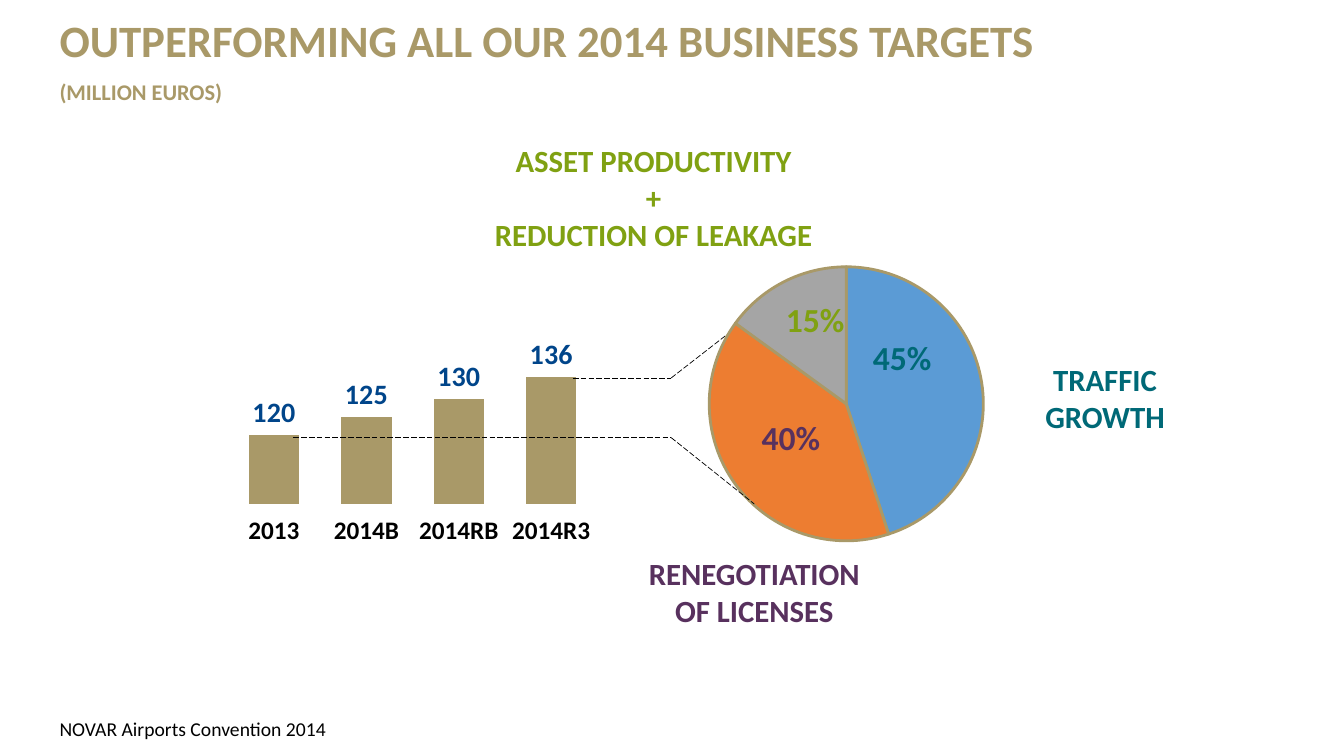
from lxml import etree
from pptx import Presentation
from pptx.chart.data import CategoryChartData
from pptx.dml.color import RGBColor
from pptx.enum.chart import XL_CHART_TYPE, XL_LABEL_POSITION, XL_TICK_MARK
from pptx.enum.dml import MSO_LINE
from pptx.enum.shapes import MSO_CONNECTOR
from pptx.enum.text import MSO_ANCHOR, MSO_AUTO_SIZE, PP_ALIGN
from pptx.oxml import parse_xml
from pptx.oxml.ns import nsdecls, qn
from pptx.util import Inches, Pt

PIE, COLUMNS = XL_CHART_TYPE.PIE, XL_CHART_TYPE.COLUMN_CLUSTERED
LABEL_CENTER, LABEL_ABOVE = XL_LABEL_POSITION.CENTER, XL_LABEL_POSITION.OUTSIDE_END
TICK_OUTSIDE, TICK_NONE = XL_TICK_MARK.OUTSIDE, XL_TICK_MARK.NONE
LONG_DASH = MSO_LINE.LONG_DASH
STRAIGHT = MSO_CONNECTOR.STRAIGHT
TOP, MIDDLE = MSO_ANCHOR.TOP, MSO_ANCHOR.MIDDLE
LEFT, CENTER = PP_ALIGN.LEFT, PP_ALIGN.CENTER
FIT_TEXT, FIXED = MSO_AUTO_SIZE.SHAPE_TO_FIT_TEXT, MSO_AUTO_SIZE.NONE

BLACK = RGBColor(0x00, 0x00, 0x00)
WHITE = RGBColor(0xFF, 0xFF, 0xFF)
GOLD = RGBColor(0xA9, 0x99, 0x68)
NAVY = RGBColor(0x00, 0x45, 0x8A)
GREEN = RGBColor(0x80, 0xA1, 0x12)
PURPLE = RGBColor(0x58, 0x31, 0x5E)
TEAL = RGBColor(0x00, 0x69, 0x77)
BLUE = RGBColor(0x5B, 0x9B, 0xD5)
ORANGE = RGBColor(0xED, 0x7D, 0x31)
GRAY = RGBColor(0xA5, 0xA5, 0xA5)

FONT = "Calibri"
SLIDE_WIDTH, SLIDE_HEIGHT = Inches(13.33), Inches(7.5)
GRID_COLUMNS, GRID_ROWS = 160, 90
PLOT_SHARES = {"x": 0.07, "y": 0.095, "w": 0.89, "h": 0.65}


def grid(*lengths):
    units = (SLIDE_WIDTH / GRID_COLUMNS, SLIDE_HEIGHT / GRID_ROWS)
    return [round(length * units[i % 2]) for i, length in enumerate(lengths)]


def style_font(font, size, color, bold=False):
    font.name = FONT
    font.size = Pt(size)
    font.bold = bold
    font.color.rgb = color


def add_text(slide, box, lines, color, anchor=TOP, align=LEFT, auto_size=FIT_TEXT, gap=0, spacing=1):
    frame = slide.shapes.add_textbox(*grid(*box)).text_frame
    frame.word_wrap = True
    frame.auto_size = auto_size
    frame.vertical_anchor = anchor
    for index, (text, size, bold) in enumerate(lines):
        paragraph = frame.add_paragraph() if index else frame.paragraphs[0]
        paragraph.text = text
        paragraph.alignment = align
        paragraph.line_spacing = spacing
        if index and gap:
            paragraph.space_before = Pt(gap)
        style_font(paragraph.font, size, color, bold)


def add_caption(slide, box, lines, color):
    add_text(slide, box, [(line, 22, True) for line in lines], color, align=CENTER)


def manual_layout(modes, shares):
    parts = [("layoutTarget", "inner")] if "w" in shares else []
    parts += [(f"{key}Mode", mode) for key, mode in modes.items()]
    parts += shares.items()
    body = "".join(f'<c:{tag} val="{value}"/>' for tag, value in parts)
    return parse_xml(f"<c:layout {nsdecls('c')}><c:manualLayout>{body}</c:manualLayout></c:layout>")


def add_plain_chart(slide, box, kind, categories, values, number_format):
    data = CategoryChartData(number_format=number_format)
    data.categories = categories
    data.add_series("Series 1", values)
    chart = slide.shapes.add_chart(kind, *grid(*box), data).chart
    chart.has_legend = chart.has_title = False
    style_font(chart.font, 18, BLACK)
    plot_area = chart.element.xpath(".//c:plotArea")[0]
    for layout in plot_area.findall(qn("c:layout")):
        plot_area.remove(layout)
    plot_area.insert(0, manual_layout({"x": "edge", "y": "edge"}, PLOT_SHARES))
    plot = chart.plots[0]
    plot.has_data_labels = True
    plot.data_labels.show_value = True
    plot.data_labels.number_format = number_format
    plot.data_labels.number_format_is_linked = False
    return chart, plot


def add_growth_pie(slide, box):
    chart, plot = add_plain_chart(slide, box, PIE, ["1", "2", "3"], [0.45, 0.4, 0.15], "0%")
    plot.vary_by_categories = True
    style_font(plot.data_labels.font, 24, GREEN, True)
    slices = [(BLUE, TEAL), (ORANGE, PURPLE), (GRAY, GREEN)]
    for index, (fill, label_color) in enumerate(slices):
        point = plot.series[0].points[index]
        point.format.fill.solid()
        point.format.fill.fore_color.rgb = fill
        point.format.line.color.rgb = GOLD
        point.format.line.width = Pt(2)
        style_font(point.data_label.font, 24, label_color, True)
        point.data_label.position = LABEL_CENTER
    label_shifts = [(-0.02, -0.08), (0, -0.01), (0, -0.05)]
    for label, (x, y) in zip(chart.element.xpath(".//c:dLbl"), label_shifts):
        label.insert(1, manual_layout({}, {"x": x, "y": y}))


def add_target_columns(slide, box):
    years = ["2013", "2014B", "2014RB", "2014R3"]
    chart, plot = add_plain_chart(slide, box, COLUMNS, years, [120, 125, 130, 136, None], "#,##0")
    plot.vary_by_categories = False
    plot.gap_width, plot.overlap = 74, 41
    style_font(plot.data_labels.font, 20, NAVY, True)
    plot.data_labels.position = LABEL_ABOVE
    columns = plot.series[0].format
    columns.fill.solid()
    columns.fill.fore_color.rgb = GOLD
    columns.line.color.rgb = WHITE
    columns.line.width = Pt(2)
    value_axis, year_axis = chart.value_axis, chart.category_axis
    value_axis.minimum_scale, value_axis.maximum_scale = 100, 150
    value_axis.has_major_gridlines = False
    value_axis.visible = False
    year_axis.major_tick_mark = TICK_OUTSIDE
    year_axis.minor_tick_mark = TICK_NONE
    year_axis.format.line.fill.background()
    style_font(year_axis.tick_labels.font, 18, BLACK, True)


def add_dashes(slide, *points):
    for start, end in zip(points, points[1:]):
        connector = slide.shapes.add_connector(STRAIGHT, *grid(*start, *end))
        connector.line.color.rgb = BLACK
        connector.line.width = Pt(0.5)
        connector.line.dash_style = LONG_DASH
        etree.SubElement(connector.element.spPr, qn("a:effectLst"))


def add_heading(slide, box):
    lines = [("OUTPERFORMING ALL OUR 2014 BUSINESS TARGETS", 32, True), ("(MILLION EUROS)", 16, True)]
    add_text(slide, box, lines, GOLD, auto_size=FIXED, gap=10, spacing=0.9)


def add_footer(slide, box):
    add_text(slide, box, [("NOVAR Airports Convention 2014", 14, False)], BLACK, anchor=MIDDLE)


def build_targets_slide(presentation):
    slide = presentation.slides.add_slide(presentation.slide_layouts[6])
    upper_bend, lower_bend = (79.9, 45), (79.9, 52.1)
    add_dashes(slide, upper_bend, (89.8, 37.3))
    add_growth_pie(slide, (64.6, 27, 70.2, 50.2))
    add_footer(slide, (5.9, 84.7, 54, 4.1))
    add_heading(slide, (5.9, 1.7, 151.3, 5.5))
    add_target_columns(slide, (22.8, 35.6, 61.8, 33))
    add_dashes(slide, (34.9, 52.1), lower_bend, (89.8, 60))
    add_dashes(slide, (68.2, 45), upper_bend)
    add_caption(slide, (53.2, 16.3, 49.2, 14.5), ["ASSET PRODUCTIVITY", "+", "REDUCTION OF LEAKAGE"], GREEN)
    add_caption(slide, (73.7, 65.5, 32.2, 10.1), ["RENEGOTIATION OF LICENSES"], PURPLE)
    add_caption(slide, (120.8, 42.4, 21.5, 10.1), ["TRAFFIC GROWTH"], TEAL)


def main():
    presentation = Presentation()
    presentation.slide_width, presentation.slide_height = SLIDE_WIDTH, SLIDE_HEIGHT
    build_targets_slide(presentation)
    presentation.save("out.pptx")


if __name__ == "__main__":
    main()
